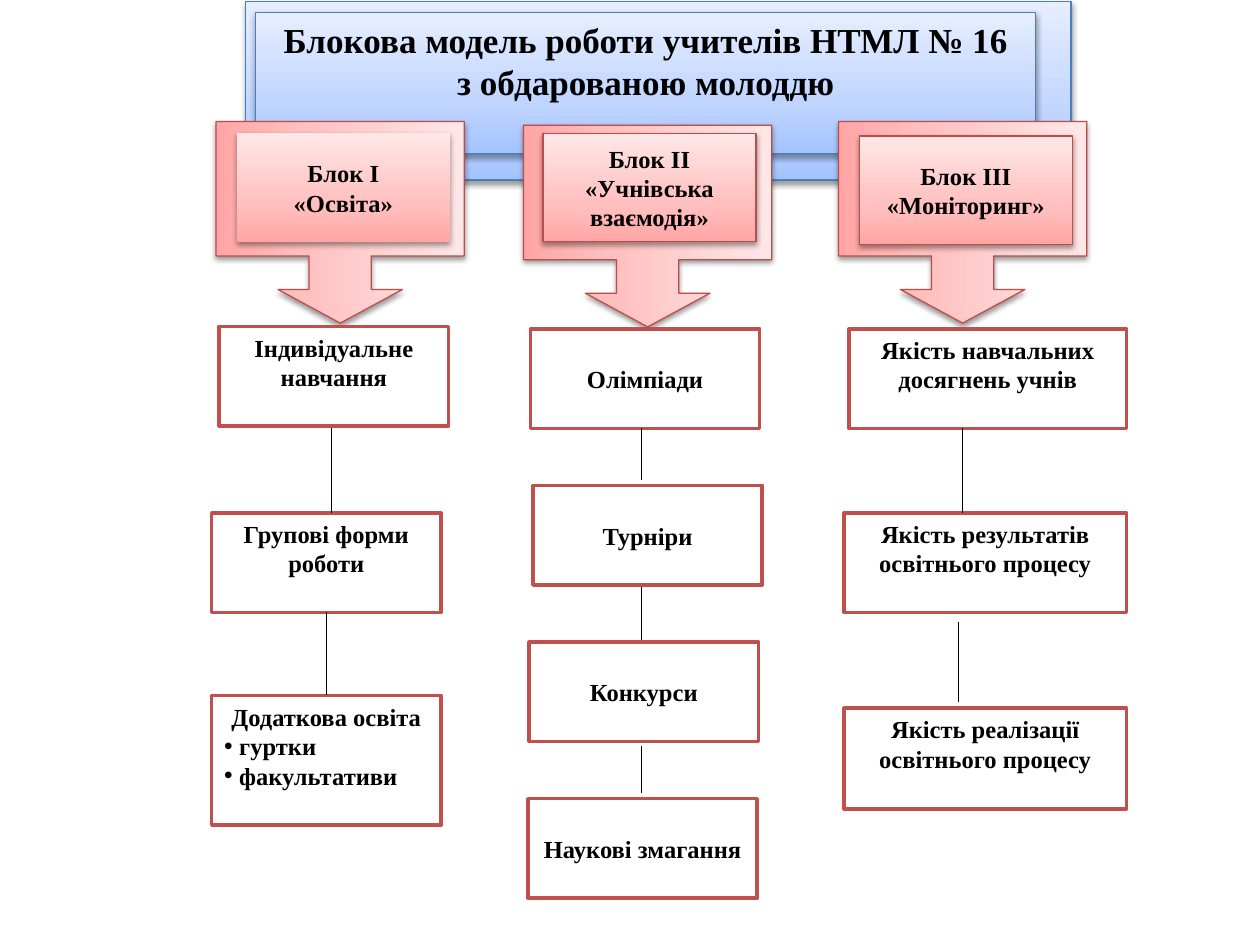
import pptx
import pptx.util
import pptx.dml.color
import pptx.enum.shapes
import pptx.enum.text
import pptx.oxml
import pptx.oxml.ns
import lxml.etree
from dataclasses import dataclass

RGB = pptx.dml.color.RGBColor
BLACK, WHITE = RGB(0, 0, 0), RGB(255, 255, 255)
BLUE_EDGE, RED_EDGE = RGB(0x4B, 0x7E, 0xBC), RGB(0xBF, 0x4C, 0x48)
STEP_EDGE = RGB(0xC0, 0x50, 0x4D)
BLUES = (RGB(0xA4, 0xC4, 0xFF), RGB(0xBF, 0xD4, 0xFF), RGB(0xE6, 0xEE, 0xFF))
REDS = (RGB(0xFF, 0xA6, 0xA5), RGB(0xFF, 0xC0, 0xBF), RGB(0xFF, 0xE7, 0xE7))
FONT = "Times New Roman"
COLUMNS, ROWS = 100, 75
UNIT = pptx.util.Inches(0.1)
SHAPES = pptx.enum.shapes.MSO_SHAPE
ALIGN = pptx.enum.text.PP_ALIGN
ANCHOR = pptx.enum.text.MSO_ANCHOR
qn = pptx.oxml.ns.qn


@dataclass
class Box:
    left: float
    top: float
    width: float
    height: float

    def inner(self, dx, dy, width, height):
        return Box(self.left + dx, self.top + dy, width, height)

    def emu(self):
        return [round(v * UNIT) for v in (self.left, self.top, self.width, self.height)]


def add_block(slide, box, kind=SHAPES.RECTANGLE):
    return slide.shapes.add_shape(kind, *box.emu())


def paint(shape, fill, edge, weight=0.75):
    shape.shadow.inherit = False
    if edge is None:
        shape.line.fill.background()
    else:
        shape.line.color.rgb = edge
        shape.line.width = pptx.util.Pt(weight)
    if isinstance(fill, RGB):
        shape.fill.solid()
        shape.fill.fore_color.rgb = fill
        return
    shape.fill.gradient()
    properties = shape._element.spPr
    stops = "".join(
        f'<a:gs pos="{share * 1000}"><a:srgbClr val="{colour}"/></a:gs>'
        for share, colour in zip((0, 35, 100), fill))
    gradient = pptx.oxml.parse_xml(
        f'<a:gradFill {pptx.oxml.ns.nsdecls("a")} rotWithShape="1"><a:gsLst>{stops}</a:gsLst>'
        '<a:lin ang="16200000" scaled="0"/></a:gradFill>')
    properties.replace(properties.find(qn("a:gradFill")), gradient)
    effects = properties.find(qn("a:effectLst"))
    effects.append(pptx.oxml.parse_xml(
        f'<a:outerShdw {pptx.oxml.ns.nsdecls("a")} blurRad="40000" dist="20000" dir="5400000"'
        ' rotWithShape="0"><a:srgbClr val="000000"><a:alpha val="38000"/></a:srgbClr></a:outerShdw>'))


def write(shape, lines, size=14, anchor=ANCHOR.TOP, bullets=()):
    frame = shape.text_frame
    frame.word_wrap = True
    frame.auto_size = pptx.enum.text.MSO_AUTO_SIZE.NONE
    frame.vertical_anchor = anchor
    for index, line in enumerate([*lines, *bullets]):
        paragraph = frame.paragraphs[0] if index == 0 else frame.add_paragraph()
        paragraph.alignment = ALIGN.CENTER
        run = paragraph.add_run()
        run.text = line
        run.font.name, run.font.size, run.font.bold = FONT, pptx.util.Pt(size), True
        run.font.color.rgb = BLACK
        if index >= len(lines):
            paragraph.alignment = ALIGN.LEFT
            layout = paragraph._p.get_or_add_pPr()
            indent = pptx.util.Inches(0.12)
            layout.set("marL", str(indent))
            layout.set("indent", str(-indent))
            lxml.etree.SubElement(layout, qn("a:buFont")).set("typeface", "Arial")
            lxml.etree.SubElement(layout, qn("a:buChar")).set("char", "•")


def add_link(slide, start, end):
    points = [round(v * UNIT) for v in (*start, *end)]
    link = slide.shapes.add_connector(pptx.enum.shapes.MSO_CONNECTOR.STRAIGHT, *points)
    link.line.color.rgb = BLACK
    link.line.width = pptx.util.Pt(0.75)
    lxml.etree.SubElement(link._element.spPr, qn("a:effectLst"))
    return link


def add_banner(slide, box):
    backdrop = add_block(slide, box)
    paint(backdrop, BLUES, BLUE_EDGE)
    heading = slide.shapes.title
    heading.left, heading.top, heading.width, heading.height = box.inner(0.8, 0.9, 61.9, 11.2).emu()
    paint(heading, BLUES, BLUE_EDGE)
    write(heading, ["Блокова модель роботи учителів НТМЛ № 16", "з обдарованою молоддю"], size=20)
    heading._element.addprevious(backdrop._element)


def add_arrow(slide, box):
    shift = (box.width - box.height) / 2
    arrow = add_block(slide, box.inner(shift, -shift, box.height, box.width),
                      SHAPES.RIGHT_ARROW_CALLOUT)
    arrow.rotation = 90
    for index, share in enumerate((0.309, 0.309, 0.167, 0.667)):
        arrow.adjustments[index] = share
    paint(arrow, REDS, RED_EDGE)


def add_column(slide, box, label, label_at, steps, links,
               label_edge=RED_EDGE, anchor=ANCHOR.TOP):
    add_arrow(slide, box.inner(0, 0, box.width, 16))
    name = add_block(slide, box.inner(*label_at, 16.9, 8.6))
    paint(name, REDS, label_edge)
    write(name, label, anchor=ANCHOR.MIDDLE)
    cards = []
    for place, line, *bullets in steps:
        card = add_block(slide, box.inner(*place))
        paint(card, WHITE, STEP_EDGE, weight=2)
        write(card, [line], anchor=anchor, bullets=bullets)
        cards.append(card)
    for upper, lower, span in zip(cards, cards[1:], links):
        x, start, end = span or (0, 0, 0)
        link = add_link(slide, (box.left + x, box.top + start), (box.left + x, box.top + end))
        if span is None:
            link.begin_connect(upper, 2)
            link.end_connect(lower, 0)


def main():
    deck = pptx.Presentation()
    deck.slide_width, deck.slide_height = COLUMNS * UNIT, ROWS * UNIT
    slide = deck.slides.add_slide(deck.slide_layouts[5])
    add_banner(slide, Box(19.5, 0.1, 65.5, 14.2))
    add_column(
        slide, Box(17.15, 9.65, 19.7, 55.85), ["Блок I", "«Освіта»"], (1.65, 0.95),
        [((0.25, 16.25, 18.2, 7.9), "Індивідуальне навчання"),
         ((-0.35, 31.05, 18.2, 7.9), "Групові форми роботи"),
         ((-0.35, 45.55, 18.2, 10.3), "Додаткова освіта", "гуртки", "факультативи")],
        [(9.15, 24.35, 31.05), None], label_edge=None)
    contests = ["Олімпіади", "Турніри", "Конкурси", "Наукові змагання"]
    pitch = 12.43
    add_column(
        slide, Box(41.55, 9.95, 19.7, 61.35), ["Блок II", "«Учнівська взаємодія»"], (1.55, 0.65),
        [((dx, 16.15 + row * pitch, 18.2, 7.9), contest)
         for row, (dx, contest) in enumerate(zip((0.55, 0.75, 0.45, 0.35), contests))],
        [(9.35, 24.05, 28.15), (9.35, 36.65, 40.85), (9.35, 49.25, 52.95)],
        anchor=ANCHOR.MIDDLE)
    add_column(
        slide, Box(66.55, 9.65, 19.7, 54.55), ["Блок III", "«Моніторинг»"], (1.65, 1.15),
        [((0.85, 16.45, 22, 7.9), "Якість навчальних досягнень учнів"),
         ((0.45, 31.05, 22.4, 7.9), "Якість результатів освітнього процесу"),
         ((0.45, 46.55, 22.4, 8), "Якість реалізації освітнього процесу")],
        [(9.85, 24.35, 31.05), (9.55, 39.75, 46.05)])
    deck.save("out.pptx")


if __name__ == "__main__":
    main()
